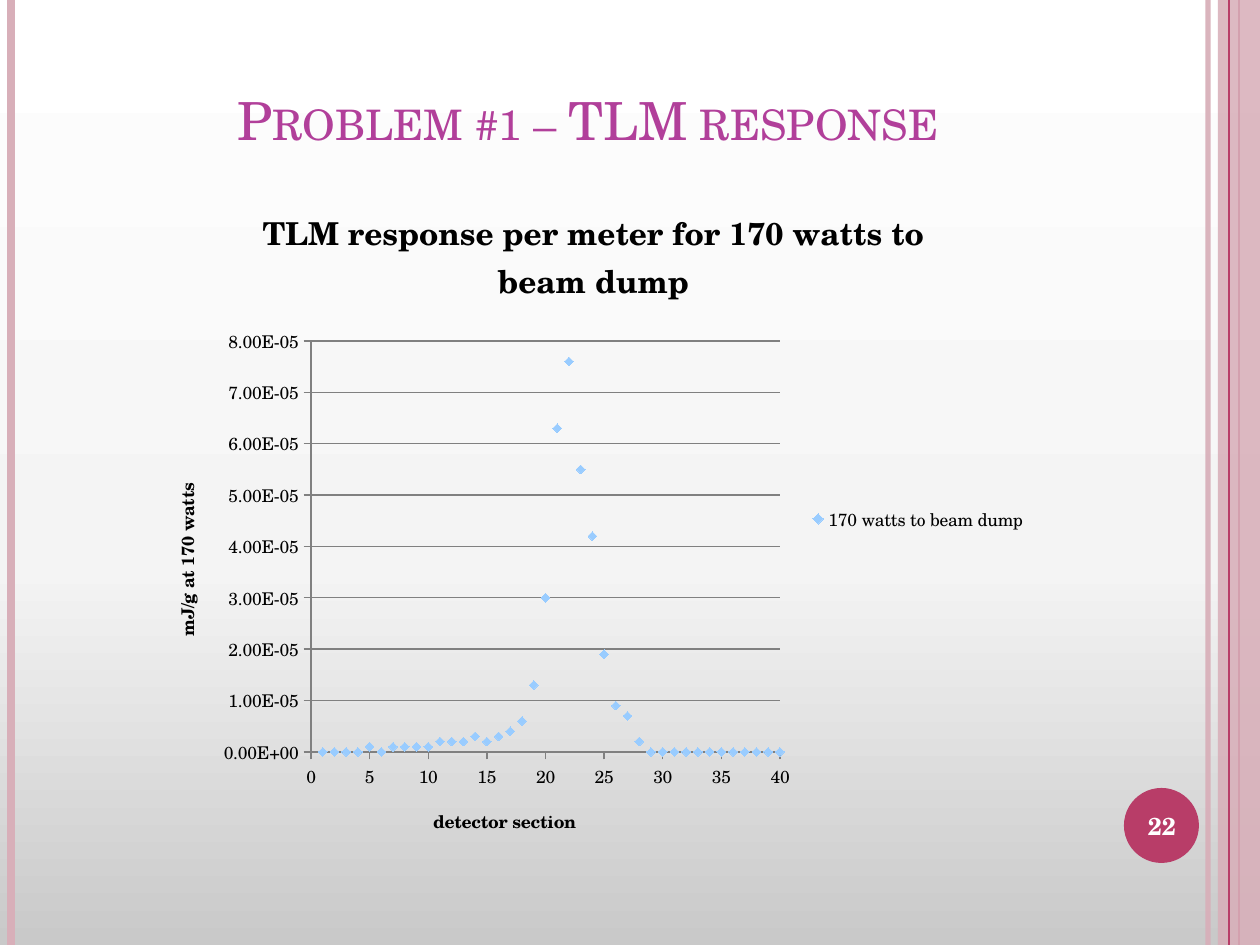
from copy import deepcopy

from lxml.etree import SubElement
from pptx import Presentation
from pptx.chart.data import XyChartData
from pptx.dml.color import RGBColor
from pptx.enum.chart import XL_CHART_TYPE, XL_LEGEND_POSITION, XL_MARKER_STYLE, XL_TICK_MARK
from pptx.enum.shapes import MSO_CONNECTOR, MSO_SHAPE
from pptx.enum.text import MSO_ANCHOR, PP_ALIGN
from pptx.oxml import parse_xml
from pptx.oxml.ns import nsdecls, qn
from pptx.util import Emu, Pt

# Content
FONT = "TeX Gyre Schola"
COLORS = {"pink": "D8AFB9", "rose": "B83D68", "title": "B13F9A", "black": "000000",
          "white": "FFFFFF", "grid": "808080", "marker": "99CCFF"}
BACKGROUND = [(0, "C9C9C9"), (0.4, "F4F4F4"), (1, "FFFFFF")]
TITLE = "Problem #1 – TLM response"
PAGE = "22"
CHART_TITLE = "TLM response per meter for 170 watts to beam dump"
X_TITLE = "detector section"
Y_TITLE = "mJ/g at 170 watts"
SERIES = "170 watts to beam dump"
# Response of sections 1 to 40, in units of 1e-6 mJ/g
RESPONSE = [0, 0, 0, 0, 1, 0, 1, 1, 1, 1, 2, 2, 2, 3, 2, 3, 4, 6, 13, 30,
            63, 76, 55, 42, 19, 9, 7, 2] + [0] * 12

# Places in px
WIDTH, HEIGHT = 1260, 945
BACK_LINES = [(1208, "pink", 3, 93), (11, "pink", 4.5, 100), (1239, "rose", 1.5, 100)]
FRONT_LINE = (1229, "rose", 0.75, 100)
BAND = (1218, 0, 42, HEIGHT)
BADGE = (1124, 788, 75, 75)
TITLE_BOX = (73, 0, 1030, 157)
PAGE_BOX = (1120, 790, 84, 72)
CHART_BOX = (147, 179, 892, 683)
PLOT_BOX = (311, 341, 469, 411)
LEGEND_BOX = (808, 505, 220, 28)


def px(v):
    return Emu(round(v * 914400 / 126))


def rgb(name):
    return RGBColor.from_string(COLORS[name])


def set_alpha(shape, percent):
    if percent < 100:
        color = next(shape._element.spPr.iter(qn("a:srgbClr")))
        SubElement(color, qn("a:alpha"), val=str(percent * 1000))


def add_line(s, x, color, width, alpha):
    line = s.shapes.add_connector(MSO_CONNECTOR.STRAIGHT, px(x), 0, px(x), px(HEIGHT))
    line.line.color.rgb = rgb(color)
    line.line.width = Pt(width)
    set_alpha(line, alpha)
    SubElement(line._element.spPr, qn("a:effectLst"))


def add_shape(s, kind, box, color, alpha=100):
    sp = s.shapes.add_shape(kind, *map(px, box))
    sp.shadow.inherit = False
    sp.fill.solid()
    sp.fill.fore_color.rgb = rgb(color)
    sp.line.fill.background()
    set_alpha(sp, alpha)


def style_font(font, size, color, bold=False):
    font.name, font.size, font.bold = FONT, Pt(size), bold
    font.color.rgb = rgb(color)


def add_text(s, box, text, anchor, size, color, bold=False):
    tf = s.shapes.add_textbox(*map(px, box)).text_frame
    tf.word_wrap = True
    tf.vertical_anchor = anchor
    p = tf.paragraphs[0]
    p.alignment = PP_ALIGN.CENTER
    r = p.add_run()
    r.text = text
    style_font(p.font, size, color, bold)
    return r


def set_layout(element, index, box, inner=False):
    """Place a chart part by a box, or by its left top corner, in slide px."""
    for old in element.findall(qn("c:layout")):
        element.remove(old)
    left, top, width, height = CHART_BOX
    parts = [(box[0] - left) / width, (box[1] - top) / height]
    if len(box) == 4:
        parts += [box[2] / width, box[3] / height]
    target = '<c:layoutTarget val="inner"/>' if inner else ""
    modes = '<c:xMode val="edge"/><c:yMode val="edge"/>'
    values = "".join(f'<c:{k} val="{v:.4f}"/>' for k, v in zip("xywh", parts))
    element.insert(index, parse_xml(
        f'<c:layout {nsdecls("c")}><c:manualLayout>{target}{modes}{values}'
        "</c:manualLayout></c:layout>"))


def set_title(title, text, size, corner):
    title.text_frame.text = text
    style_font(title.text_frame.paragraphs[0].font, size, "black", True)
    set_layout(title._element, 1, corner)


def add_chart(s):
    data = XyChartData()
    series = data.add_series(SERIES)
    for section, value in enumerate(RESPONSE, 1):
        series.add_data_point(section, round(value * 1e-6, 6))
    chart = s.shapes.add_chart(XL_CHART_TYPE.XY_SCATTER, *map(px, CHART_BOX), data).chart
    style_font(chart.font, 10, "black")
    set_title(chart.chart_title, CHART_TITLE, 18, (257, 199))

    # Axes
    x_axis, y_axis = chart.category_axis, chart.value_axis
    for axis, top, step, form, text, corner in [
            (x_axis, 40, 5, "General", X_TITLE, (430, 804)),
            (y_axis, 8e-5, 1e-5, "0.00E+00", Y_TITLE, (169, 480))]:
        axis.minimum_scale, axis.maximum_scale, axis.major_unit = 0, top, step
        axis.major_tick_mark = XL_TICK_MARK.OUTSIDE
        axis.minor_tick_mark = XL_TICK_MARK.NONE
        axis.tick_labels.number_format = form
        axis.tick_labels.number_format_is_linked = False
        axis.format.line.color.rgb = rgb("grid")
        set_title(axis.axis_title, text, 10, corner)
    x_axis.has_major_gridlines = False
    y_axis.has_major_gridlines = True
    y_axis.major_gridlines.format.line.color.rgb = rgb("grid")

    # Points
    plot = chart.plots[0]
    plot.vary_by_categories = False
    points = plot.series[0]
    points.smooth = False
    points.format.line.fill.background()
    points.marker.style = XL_MARKER_STYLE.DIAMOND
    points.marker.size = 5
    points.marker.format.fill.solid()
    points.marker.format.fill.fore_color.rgb = rgb("marker")
    points.marker.format.line.fill.background()

    # Legend and plot area
    chart.has_legend = True
    chart.legend.position = XL_LEGEND_POSITION.RIGHT
    chart.legend.include_in_layout = False
    set_layout(chart.legend._element, 1, LEGEND_BOX)
    set_layout(next(chart._chartSpace.iter(qn("c:plotArea"))), 0, PLOT_BOX, inner=True)


def set_background(s):
    fill = s.background.fill
    fill.gradient()
    fill.gradient_angle = 90
    stops = next(s._element.iter(qn("a:gsLst")))
    stops.append(deepcopy(stops[-1]))
    for stop, (position, color) in zip(fill.gradient_stops, BACKGROUND):
        stop.position = position
        stop.color.rgb = RGBColor.from_string(color)


def main():
    prs = Presentation()
    prs.slide_width, prs.slide_height = px(WIDTH), px(HEIGHT)
    s = prs.slides.add_slide(prs.slide_layouts[6])
    set_background(s)

    # Frame
    for line in BACK_LINES:
        add_line(s, *line)
    add_shape(s, MSO_SHAPE.RECTANGLE, BAND, "pink", 87)
    add_line(s, *FRONT_LINE)
    add_shape(s, MSO_SHAPE.OVAL, BADGE, "rose")

    # Title, page number and chart
    r = add_text(s, TITLE_BOX, TITLE, MSO_ANCHOR.BOTTOM, 30, "title")
    r.font._element.set("cap", "small")
    add_text(s, PAGE_BOX, PAGE, MSO_ANCHOR.MIDDLE, 14, "white", True)
    add_chart(s)
    prs.save("out.pptx")


if __name__ == "__main__":
    main()
